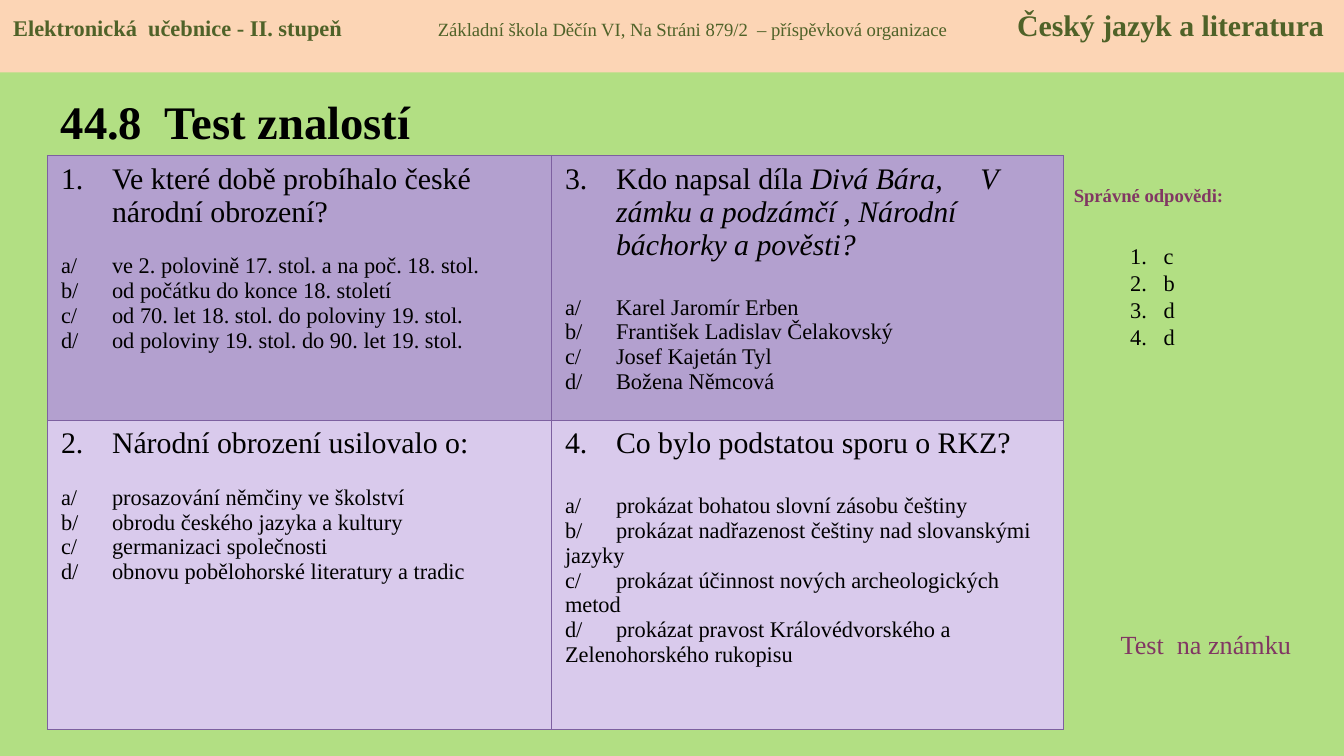
from dataclasses import dataclass

from lxml.etree import SubElement
from pptx import Presentation
from pptx.dml.color import RGBColor
from pptx.enum.shapes import MSO_SHAPE as Shape
from pptx.enum.text import MSO_ANCHOR as Anchor, PP_ALIGN as Align
from pptx.oxml.ns import qn
from pptx.util import Inches, Pt


@dataclass(frozen=True)
class Theme:
    font: str = "Times New Roman"
    page: str = "B2DF83"
    band: str = "FCD5B5"
    olive: str = "4F6228"
    plum: str = "813763"
    ink: str = "000000"
    border: str = "7D60A0"
    rows: tuple = ("B3A0CF", "D9CAEC")
    title: int = 25
    question: int = 16
    note: int = 14
    body: int = 12
    small: int = 10


class TestSlide:
    """Places elements on a grid of 100 columns, each 0.1 inch wide and high."""

    def __init__(self, prs, theme):
        self.theme = theme
        self.unit = prs.slide_width / 100
        self.s = prs.slides.add_slide(prs.slide_layouts[6])
        fill = self.s.background.fill
        fill.solid()
        fill.fore_color.rgb = RGBColor.from_string(theme.page)

    def box(self, *cells):
        return [round(c * self.unit) for c in cells]

    def style(self, r, size, color, bold=False, italic=False):
        f = r.font
        f.name, f.size, f.bold, f.italic = self.theme.font, Pt(size), bold, italic
        f.color.rgb = RGBColor.from_string(color)

    def layout(self, p, indent=0, number=None, tabs=()):
        """Sets hanging indent, automatic number and tab stops in inches."""
        pPr = p._p.get_or_add_pPr()
        if indent:
            pPr.set("marL", str(Inches(indent)))
            pPr.set("indent", str(-Inches(indent)))
        if number:
            SubElement(pPr, qn("a:buAutoNum"), type="arabicPeriod", startAt=str(number))
        if tabs:
            stops = SubElement(pPr, qn("a:tabLst"))
            for t in tabs:
                SubElement(stops, qn("a:tab"), pos=str(Inches(t)), algn="l")

    def text(self, at, text, size, color, bold=False, align=Align.LEFT, anchor=Anchor.TOP):
        tf = self.s.shapes.add_textbox(*self.box(*at)).text_frame
        tf.word_wrap, tf.vertical_anchor = True, anchor
        tf.text = text
        for p in tf.paragraphs:
            p.alignment = align
            for r in p.runs:
                self.style(r, size, color, bold)
        return tf

    def band(self, at, parts, tabs):
        sp = self.s.shapes.add_shape(Shape.RECTANGLE, *self.box(*at))
        sp.shadow.inherit = False
        sp.fill.solid()
        sp.fill.fore_color.rgb = RGBColor.from_string(self.theme.band)
        sp.line.fill.background()
        tf = sp.text_frame
        tf.word_wrap, tf.vertical_anchor = True, Anchor.TOP
        p = tf.paragraphs[0]
        p.alignment = Align.LEFT
        self.layout(p, tabs=tabs)
        for text, size, bold in parts:
            r = p.add_run()
            r.text = text
            self.style(r, size, self.theme.olive, bold)

    def numbered(self, at, items, pitch):
        tf = self.text(at, "\n".join(items), self.theme.body, self.theme.ink)
        for p in tf.paragraphs:
            self.layout(p, 0.25, 1)
            p.line_spacing = Pt(pitch)

    def borders(self, cell):
        tcPr = cell._tc.get_or_add_tcPr()
        for side in ("lnL", "lnR", "lnT", "lnB"):
            ln = SubElement(tcPr, qn(f"a:{side}"), w=str(Pt(0.75)))
            SubElement(SubElement(ln, qn("a:solidFill")), qn("a:srgbClr"), val=self.theme.border)

    def question(self, cell, number, q):
        t, tf = self.theme, cell.text_frame
        p = tf.paragraphs[0]
        self.layout(p, 0.38, number, q.get("tabs", ()))
        for text, italic in q["ask"]:
            r = p.add_run()
            r.text = text
            self.style(r, t.question, t.ink, italic=italic)
        for i, (letter, answer) in enumerate(zip("abcd", q["answers"])):
            p = tf.add_paragraph()
            p.text = f"{letter}/\t{answer}"
            if q.get("hanging", True):
                self.layout(p, 0.38)
            else:
                self.layout(p, tabs=(0.38,))
            if i == 0:
                p.space_before = Pt(q["gap"])
            self.style(p.runs[0], t.body, t.ink)

    def table(self, at, widths, heights, questions):
        """Fills the cells column by column with numbered questions."""
        n = len(heights)
        table = self.s.shapes.add_table(n, len(widths), *self.box(*at)).table
        for col, w in zip(table.columns, self.box(*widths)):
            col.width = w
        for row, h in zip(table.rows, self.box(*heights)):
            row.height = h
        for i, q in enumerate(questions):
            cell = table.cell(i % n, i // n)
            self.borders(cell)
            cell.fill.solid()
            cell.fill.fore_color.rgb = RGBColor.from_string(self.theme.rows[i % n])
            self.question(cell, i + 1, q)


QUESTIONS = [
    dict(ask=[("Ve které době probíhalo české národní obrození?", False)], gap=13.3,
         answers=["ve 2. polovině 17. stol. a na poč. 18. stol.",
                  "od počátku do konce 18. století",
                  "od 70. let 18. stol. do poloviny 19. stol.",
                  "od poloviny 19. stol. do 90. let 19. stol."]),
    dict(ask=[("Národní obrození usilovalo o:", False)], gap=13.3,
         answers=["prosazování němčiny ve školství",
                  "obrodu českého jazyka a kultury",
                  "germanizaci společnosti",
                  "obnovu pobělohorské literatury a tradic"]),
    dict(ask=[("Kdo napsal díla ", False),
              ("Divá Bára,\tV zámku a podzámčí , Národní báchorky a pověsti?", True)],
         gap=17.7, tabs=(3.09,),
         answers=["Karel Jaromír Erben", "František Ladislav Čelakovský",
                  "Josef Kajetán Tyl", "Božena Němcová"]),
    dict(ask=[("Co bylo podstatou sporu o RKZ?", False)], gap=17.7, hanging=False,
         answers=["prokázat bohatou slovní zásobu češtiny",
                  "prokázat nadřazenost češtiny nad slovanskými jazyky",
                  "prokázat účinnost nových archeologických metod",
                  "prokázat pravost Královédvorského a Zelenohorského rukopisu"]),
]


def main():
    prs = Presentation()
    prs.slide_width = Inches(10)
    prs.slide_height = prs.slide_width * 9 // 16
    t = Theme()
    slide = TestSlide(prs, t)

    # Title and test
    slide.text((3.54, 5.75, 31.9, 6.5), "44.8  Test znalostí", t.title, t.ink, True,
               anchor=Anchor.MIDDLE)
    slide.table((3.54, 11.6, 75.6, 42.7), (37.5, 38.1), (19.7, 23), QUESTIONS)

    # Correct answers and grading note
    slide.text((77.6, 13.2, 15.7, 2.7), "Správné odpovědi:", t.small, t.plum, True, Align.CENTER)
    slide.numbered((83.1, 17.5, 5.5, 9), "cbdd", 14.5)
    slide.text((82.4, 46.3, 15.7, 3.4), "Test  na známku", t.note, t.plum)

    # Header band
    slide.band((0, 0, 100, 5.4), [
        ("Elektronická  učebnice - II. stupeň", t.body, True),
        ("\tZákladní škola Děčín VI, Na Stráni 879/2  – příspěvková organizace", t.small, False),
        ("\tČeský jazyk a literatura", t.question, True),
    ], tabs=(3.16, 7.47))

    prs.save("out.pptx")


if __name__ == "__main__":
    main()
